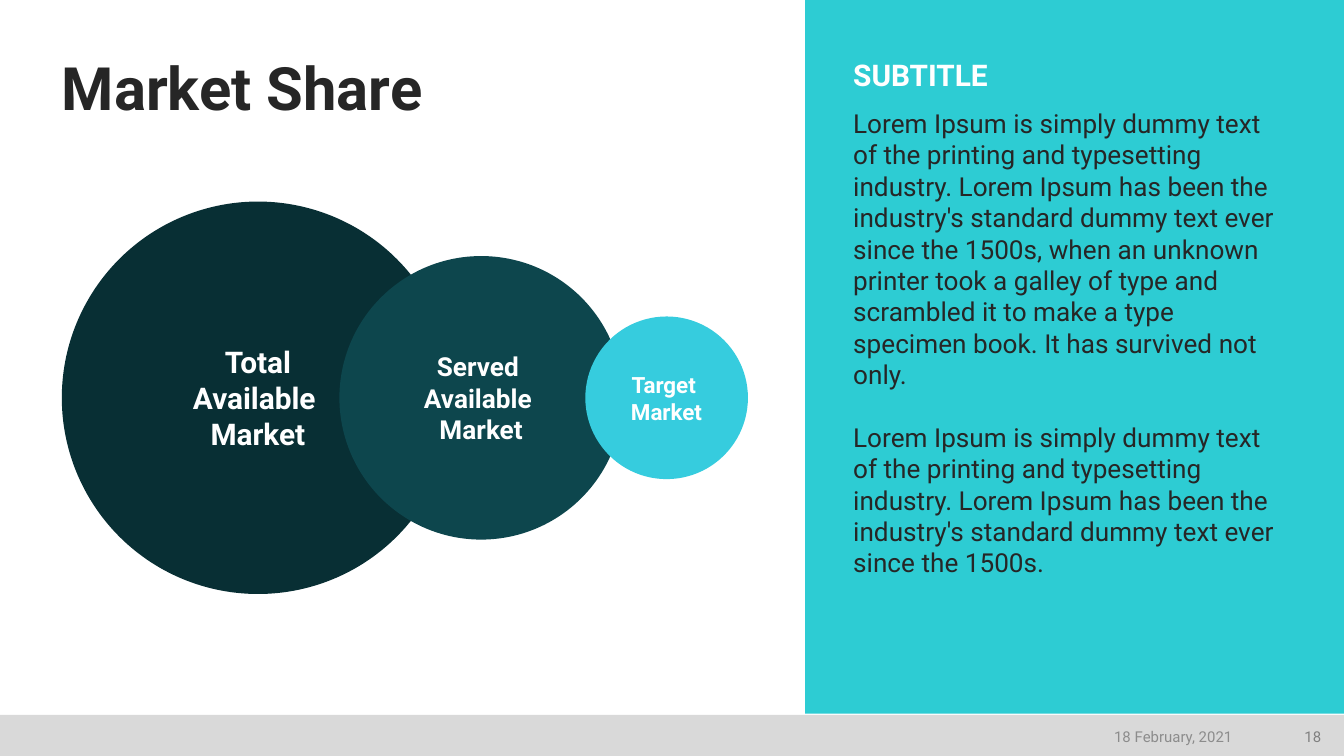
from pptx import Presentation
from pptx.dml.color import RGBColor
from pptx.enum.shapes import MSO_SHAPE as Shape
from pptx.enum.text import MSO_ANCHOR as Anchor, MSO_AUTO_SIZE as AutoSize, PP_ALIGN as Align
from pptx.util import Inches, Pt

WIDTH = 10
HEIGHT = WIDTH * 9 / 16
MARGIN = 0.46
PANEL_BOTTOM = 5.31
FOOTER_TOP = 5.32
PANEL_LEFT = 5.99
PANEL_TEXT_LEFT = 6.25
CIRCLE_MIDDLE = 2.96
FONT = "Roboto"
COLORS = {
    "footer": "D9D9D9", "panel": "2DCCD3", "ink": "262626", "white": "FFFFFF",
    "total": "082F34", "served": "0D464D", "target": "36CCDE",
    "number": "808080", "date": "8C8C8C",
}

# colour, centre x, diameter, label width, label height, text size, label lines
MARKETS = [
    ("total", 1.92, 2.92, 1.25, 0.69, 16, ["Total", "Available ", "Market"]),
    ("served", 3.58, 2.11, 1.19, 0.69, 14, ["Served ", "Available ", "Market"]),
    ("target", 4.96, 1.21, 0.86, 0.6, 12, ["Target ", "Market"]),
]
BODY = [
    "Lorem Ipsum is simply dummy text of the printing and typesetting industry. "
    "Lorem Ipsum has been the industry's standard dummy text ever since the 1500s, "
    "when an unknown printer took a galley of type and scrambled it to make a type "
    "specimen book. It has survived not only.",
    "Lorem Ipsum is simply dummy text of the printing and typesetting industry. "
    "Lorem Ipsum has been the industry's standard dummy text ever since the 1500s.",
]


def add_filled_shape(slide, kind, box, color):
    shape = slide.shapes.add_shape(kind, *map(Inches, box))
    shape.shadow.inherit = False
    shape.fill.solid()
    shape.fill.fore_color.rgb = RGBColor.from_string(COLORS[color])
    shape.line.fill.background()


def write_text(frame, lines, size, color, bold=False, align=Align.LEFT,
               anchor=Anchor.TOP, gap=0, inset=True):
    """Fill a text frame, one paragraph a line, with gap points between them."""
    frame.word_wrap = True
    frame.auto_size = AutoSize.NONE
    frame.vertical_anchor = anchor
    if not inset:
        frame.margin_left = frame.margin_right = 0
        frame.margin_top = frame.margin_bottom = 0
    for index, line in enumerate(lines):
        paragraph = frame.add_paragraph() if index else frame.paragraphs[0]
        paragraph.alignment = align
        paragraph.space_before = Pt(gap if index else 0)
        run = paragraph.add_run()
        run.text = line
        run.font.name = FONT
        run.font.size = Pt(size)
        run.font.bold = bold
        run.font.color.rgb = RGBColor.from_string(COLORS[color])


def add_text(slide, box, *args, **kwargs):
    text_box = slide.shapes.add_textbox(*map(Inches, box))
    write_text(text_box.text_frame, *args, **kwargs)


def centred_box(center_x, width, height):
    return center_x - width / 2, CIRCLE_MIDDLE - height / 2, width, height


def add_title(slide):
    title = slide.shapes.title
    title.left, title.top = Inches(MARGIN), Inches(0.4)
    title.width, title.height = Inches(9.1), Inches(0.52)
    write_text(title.text_frame, ["Market Share"], 32, "ink", bold=True,
               anchor=Anchor.BOTTOM, inset=False)
    title.text_frame.paragraphs[0].line_spacing = 0.9


def add_markets(slide):
    for color, center, diameter, *_ in MARKETS:
        add_filled_shape(slide, Shape.OVAL, centred_box(center, diameter, diameter), color)
    for _, center, _, width, height, size, lines in MARKETS:
        add_text(slide, centred_box(center, width, height), lines, size, "white",
                 bold=True, align=Align.CENTER, anchor=Anchor.MIDDLE, inset=False)


def add_panel(slide):
    add_filled_shape(slide, Shape.RECTANGLE,
                     (PANEL_LEFT, 0, WIDTH - PANEL_LEFT, PANEL_BOTTOM), "panel")
    add_text(slide, (PANEL_TEXT_LEFT, 0.75, 3.44, 3.64), BODY, 14, "ink", gap=16.8)
    add_text(slide, (PANEL_TEXT_LEFT, 0.37, 2.99, 0.37), ["SUBTITLE"], 16, "white", bold=True)


def add_footer_text(slide):
    for left, width, text, color in [(9.56, 0.37, "18", "number"),
                                     (7.02, 2.25, "18 February, 2021", "date")]:
        add_text(slide, (left, 5.35, width, 0.26), [text], 8, color,
                 align=Align.RIGHT, anchor=Anchor.MIDDLE)


def main():
    presentation = Presentation()
    presentation.slide_width, presentation.slide_height = Inches(WIDTH), Inches(HEIGHT)
    slide = presentation.slides.add_slide(presentation.slide_layouts[5])
    add_filled_shape(slide, Shape.RECTANGLE,
                     (0, FOOTER_TOP, WIDTH, HEIGHT - FOOTER_TOP), "footer")
    add_title(slide)
    add_markets(slide)
    add_panel(slide)
    add_footer_text(slide)
    presentation.save("out.pptx")


if __name__ == "__main__":
    main()
